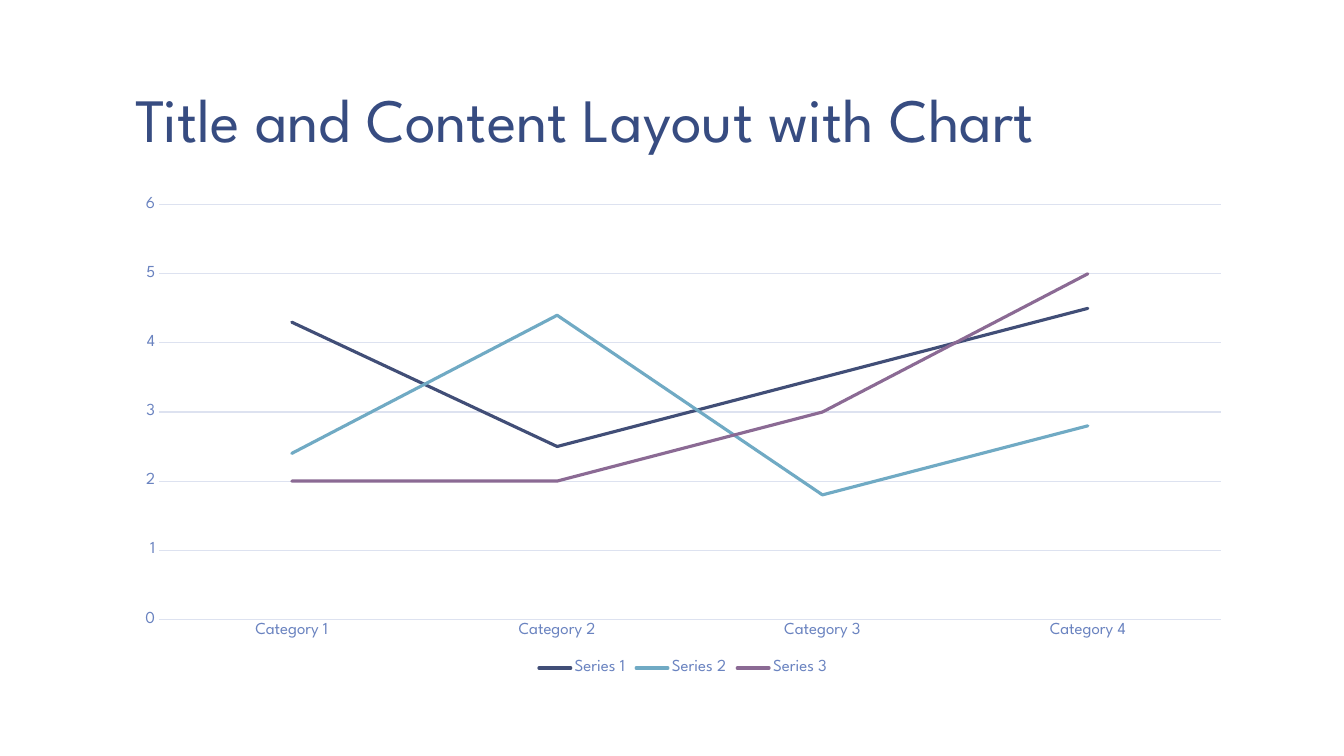
from pptx import Presentation, util as u
from pptx.chart.data import CategoryChartData
from pptx.dml.color import RGBColor
from pptx.enum import chart as c, text

PX = 914400 / 100.8
FONT = "League Spartan"
COLORS = {
    "background": "FFFFFF",
    "title": "374C81",
    "label": "6A83C0",
    "grid": "DDE2F0",
    "Series 1": "414E77",
    "Series 2": "70AAC4",
    "Series 3": "8B6A94",
}
SERIES = {
    "Series 1": (4.3, 2.5, 3.5, 4.5),
    "Series 2": (2.4, 4.4, 1.8, 2.8),
    "Series 3": (2, 2, 3, 5),
}


def px(*lengths):
    return [u.Emu(round(length * PX)) for length in lengths]


def style_font(font, size, color):
    font.name = FONT
    font.size = u.Pt(size)
    font.bold = False
    font.color.rgb = RGBColor.from_string(COLORS[color])


presentation = Presentation()
presentation.slide_width, presentation.slide_height = px(1344, 756)
slide = presentation.slides.add_slide(presentation.slide_layouts[5])
slide.background.fill.solid()
slide.background.fill.fore_color.rgb = RGBColor.from_string(COLORS["background"])

# Title
title = slide.shapes.title
title.left, title.top, title.width, title.height = px(123, 8, 1120, 154)
frame = title.text_frame
frame.text = "Title and Content Layout with Chart"
frame.word_wrap = True
frame.auto_size = text.MSO_AUTO_SIZE.NONE
frame.vertical_anchor = text.MSO_ANCHOR.BOTTOM
frame.margin_left, frame.margin_top, frame.margin_right, frame.margin_bottom = px(13, 7, 13, 7)
paragraph = frame.paragraphs[0]
paragraph.alignment = text.PP_ALIGN.LEFT
paragraph.line_spacing = 0.85
style_font(paragraph.font, 44, "title")

# Line chart
data = CategoryChartData()
data.categories = [f"Category {number}" for number in range(1, 5)]
for name, values in SERIES.items():
    data.add_series(name, values)
chart = slide.shapes.add_chart(c.XL_CHART_TYPE.LINE, *px(123, 187, 1120, 493), data).chart
chart.has_title = False
style_font(chart.font, 10, "title")

for series in chart.plots[0].series:
    series.smooth = False
    series.marker.style = c.XL_MARKER_STYLE.NONE
    series.format.line.width = u.Pt(2.25)
    series.format.line.color.rgb = RGBColor.from_string(COLORS[series.name])
    series.format.line._get_or_add_ln().set("cap", "rnd")

# Axes and gridlines
category_axis, value_axis = chart.category_axis, chart.value_axis
for axis in (category_axis, value_axis):
    axis.major_tick_mark = axis.minor_tick_mark = c.XL_TICK_MARK.NONE
    style_font(axis.tick_labels.font, 12, "label")
value_axis.minimum_scale, value_axis.maximum_scale, value_axis.major_unit = 0, 6, 1
value_axis.has_major_gridlines = True
value_axis.format.line.fill.background()
for line in (category_axis.format.line, value_axis.major_gridlines.format.line):
    line.width = u.Pt(0.75)
    line.color.rgb = RGBColor.from_string(COLORS["grid"])

# Legend
chart.has_legend = True
chart.legend.position = c.XL_LEGEND_POSITION.BOTTOM
chart.legend.include_in_layout = False
style_font(chart.legend.font, 12, "label")

presentation.save("out.pptx")
